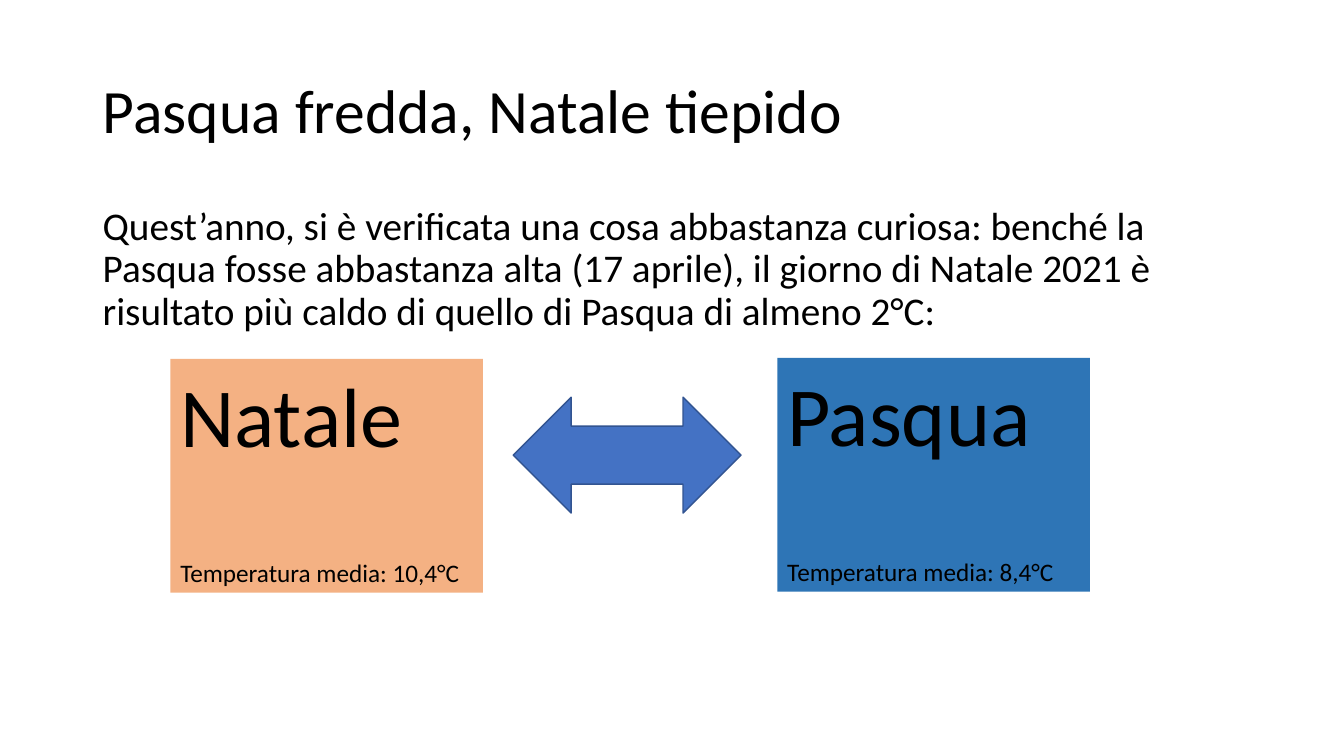
from lxml import etree
from pptx import Presentation
from pptx.dml.color import RGBColor
from pptx.enum import shapes, text
from pptx.util import Inches, Pt

BLACK = RGBColor(0x00, 0x00, 0x00)
PEACH = RGBColor(0xF4, 0xB1, 0x83)
BLUE = RGBColor(0x2E, 0x75, 0xB6)
ARROW_BLUE = RGBColor(0x44, 0x72, 0xC4)
ARROW_EDGE = RGBColor(0x32, 0x54, 0x91)


def place(item, left, top, width, height):
    frame = {"left": left, "top": top, "width": width, "height": height}
    for key, value in frame.items():
        setattr(item, key, Inches(value))


def write(paragraph, words, size, **layout):
    paragraph.text = words
    for key, value in {"alignment": text.PP_ALIGN.LEFT, **layout}.items():
        setattr(paragraph, key, value)
    font = paragraph.runs[0].font
    for key, value in {"name": "Calibri", "size": Pt(size)}.items():
        setattr(font, key, value)
    font.color.rgb = BLACK


deck = Presentation()
deck.slide_width, deck.slide_height = Inches(13.33), Inches(7.5)
slide = deck.slides.add_slide(deck.slide_layouts[5])

# Title
title = slide.shapes.title
place(title, 0.92, 0.4, 11.5, 1.45)
title.text_frame.vertical_anchor = text.MSO_ANCHOR.MIDDLE
write(title.text_frame.paragraphs[0], "Pasqua fredda, Natale tiepido", 44, line_spacing=0.9)

# Introduction
intro = slide.shapes.add_textbox(Inches(0.92), Inches(2), Inches(11.5), Inches(1.56))
intro.text_frame.word_wrap = True
write(
    intro.text_frame.paragraphs[0],
    "Quest’anno, si è verificata una cosa abbastanza curiosa: benché la Pasqua "
    "fosse abbastanza alta (17 aprile), il giorno di Natale 2021 è risultato "
    "più caldo di quello di Pasqua di almeno 2°C:",
    28, line_spacing=0.9, space_before=Pt(10),
)

# Holiday cards with their mean temperature
holidays = [
    ("Natale", "10,4°C", PEACH, 1.69, 3.56),
    ("Pasqua", "8,4°C", BLUE, 7.71, 3.55),
]
for holiday, temperature, colour, left, top in holidays:
    card = slide.shapes.add_shape(
        shapes.MSO_SHAPE.RECTANGLE, Inches(left), Inches(top), Inches(3.1), Inches(2.32))
    card.shadow.inherit = False
    card.fill.solid()
    card.fill.fore_color.rgb = colour
    card.line.fill.background()
    body = card.text_frame
    body.word_wrap = True
    body.vertical_anchor = text.MSO_ANCHOR.TOP
    write(body.paragraphs[0], holiday, 60)
    write(body.add_paragraph(), f"Temperatura media: {temperature}", 18, space_before=Pt(66))

# Comparison arrow
arrow = slide.shapes.add_shape(
    shapes.MSO_SHAPE.LEFT_RIGHT_ARROW, Inches(5.09), Inches(3.94), Inches(2.26), Inches(1.15))
arrow.shadow.inherit = False
arrow.fill.solid()
arrow.fill.fore_color.rgb = ARROW_BLUE
arrow.line.color.rgb = ARROW_EDGE
arrow.line.width = Pt(1)

deck.save("out.pptx")
